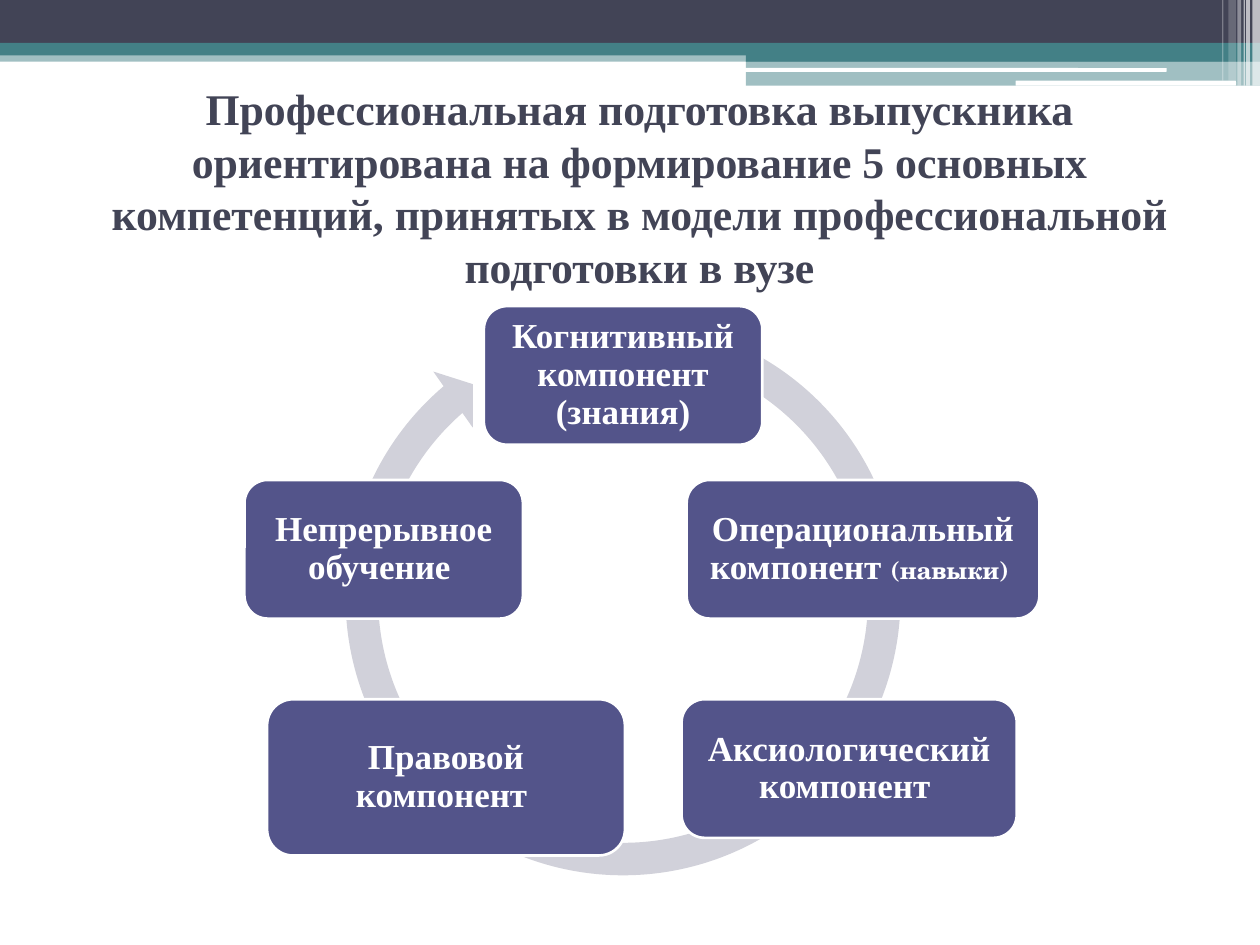
from dataclasses import dataclass

from lxml.etree import SubElement
from pptx import Presentation
from pptx.dml.color import RGBColor
from pptx.dml.fill import FillFormat
from pptx.enum.shapes import MSO_SHAPE
from pptx.enum.text import MSO_ANCHOR, MSO_AUTO_SIZE, PP_ALIGN
from pptx.oxml.ns import qn
from pptx.shapes.autoshape import Shape
from pptx.slide import Slide
from pptx.text.text import Font
from pptx.util import Inches, Pt

NAVY = "424456"
TEAL = "438086"
WHITE = "FFFFFF"
INDIGO = "53548A"
LAVENDER = "D1D1DA"
SERIF = "Times New Roman"


@dataclass
class Bar:
    left: float
    top: float
    width: float
    height: float
    color: str
    opacity: int = 100
    kind: MSO_SHAPE = MSO_SHAPE.RECTANGLE


@dataclass
class Component:
    left: float
    top: float
    width: float
    text: str
    note: str = ""
    height: float = 1.1


BARS = [
    Bar(0, 0.4, 10, 0.09, TEAL, 50),
    Bar(0, 0, 10, 0.34, NAVY),
    Bar(0, 0.34, 10, 0.1, TEAL),
    Bar(5.92, 0.39, 4.08, 0.1, TEAL),
    Bar(5.92, 0.48, 4.08, 0.2, TEAL, 50),
    Bar(5.91, 0.54, 3.35, 0.03, WHITE, kind=MSO_SHAPE.ROUNDED_RECTANGLE),
    Bar(8.06, 0.64, 1.75, 0.04, WHITE, kind=MSO_SHAPE.ROUNDED_RECTANGLE),
    Bar(9.94, 0, 0.06, 0.68, WHITE, 65),
    Bar(9.89, 0, 0.03, 0.68, WHITE, 65),
    Bar(9.87, 0, 0.01, 0.68, WHITE, 60),
    Bar(9.82, 0, 0.03, 0.68, WHITE, 40),
    Bar(9.75, 0, 0.06, 0.64, WHITE, 20),
    Bar(9.7, 0, 0.01, 0.64, WHITE, 30),
]

COMPONENTS = [
    Component(3.84, 2.43, 2.21, "Когнитивный компонент (знания)"),
    Component(5.45, 3.81, 2.8, "Операциональный компонент ", "(навыки) "),
    Component(5.41, 5.55, 2.66, "Аксиологический компонент "),
    Component(2.12, 5.55, 2.84, "Правовой компонент ", height=1.24),
    Component(1.94, 3.81, 2.21, "Непрерывное обучение "),
]


def set_fill(fill: FillFormat, color: str) -> None:
    fill.solid()
    fill.fore_color.rgb = RGBColor.from_string(color)


def set_font(font: Font, name: str, size: float, color: str) -> None:
    font.name = name
    font.size = Pt(size)
    font.bold = True
    set_fill(font.fill, color)


def add_filled_shape(slide: Slide, kind: MSO_SHAPE, left: float, top: float,
                     width: float, height: float, color: str) -> Shape:
    shape = slide.shapes.add_shape(
        kind, Inches(left), Inches(top), Inches(width), Inches(height))
    shape.shadow.inherit = False
    set_fill(shape.fill, color)
    shape.line.fill.background()
    return shape


def add_bar(slide: Slide, bar: Bar) -> None:
    shape = add_filled_shape(
        slide, bar.kind, bar.left, bar.top, bar.width, bar.height, bar.color)
    if bar.opacity < 100:
        color = shape.element.spPr.find(qn("a:solidFill"))[0]
        SubElement(color, qn("a:alpha"), val=str(bar.opacity * 1000))


def add_component(slide: Slide, component: Component) -> None:
    shape = add_filled_shape(
        slide, MSO_SHAPE.ROUNDED_RECTANGLE, component.left, component.top,
        component.width, component.height, INDIGO)
    set_fill(shape.line.fill, WHITE)
    shape.line.width = Pt(1.5)
    frame = shape.text_frame
    frame.word_wrap = True
    frame.vertical_anchor = MSO_ANCHOR.MIDDLE
    frame.margin_left = frame.margin_right = Inches(0.08)
    frame.margin_top = frame.margin_bottom = Inches(0.08)
    paragraph = frame.paragraphs[0]
    paragraph.alignment = PP_ALIGN.CENTER
    paragraph.line_spacing = 0.9
    set_font(paragraph.font, SERIF, 20, WHITE)
    paragraph.add_run().text = component.text
    if component.note:
        note = paragraph.add_run()
        note.text = component.note
        set_font(note.font, "TeX Gyre Schola", 14, WHITE)


def add_title(slide: Slide, text: str) -> None:
    title = slide.shapes.title
    title.left, title.top = Inches(0.35), Inches(0.78)
    title.width, title.height = Inches(9.45), Inches(1.41)
    frame = title.text_frame
    frame.text = text
    frame.word_wrap = True
    frame.auto_size = MSO_AUTO_SIZE.NONE
    frame.vertical_anchor = MSO_ANCHOR.MIDDLE
    paragraph = frame.paragraphs[0]
    paragraph.alignment = PP_ALIGN.CENTER
    set_font(paragraph.font, SERIF, 25, NAVY)


def add_cycle(slide: Slide) -> None:
    arrow = add_filled_shape(
        slide, MSO_SHAPE.CIRCULAR_ARROW, 2.6, 2.4, 4.69, 4.69, LAVENDER)
    for index, value in enumerate((0.055, 3.307, 137.631, 173.938, 0.058)):
        arrow.adjustments[index] = value
    for component in COMPONENTS:
        add_component(slide, component)


def main() -> None:
    presentation = Presentation()
    presentation.slide_width = Inches(10)
    presentation.slide_height = Inches(7.5)
    slide = presentation.slides.add_slide(presentation.slide_layouts[5])
    for bar in BARS:
        add_bar(slide, bar)
    add_title(slide, "Профессиональная подготовка выпускника ориентирована на "
                     "формирование 5 основных компетенций, принятых в модели "
                     "профессиональной подготовки в вузе")
    add_cycle(slide)
    presentation.save("out.pptx")


if __name__ == "__main__":
    main()
